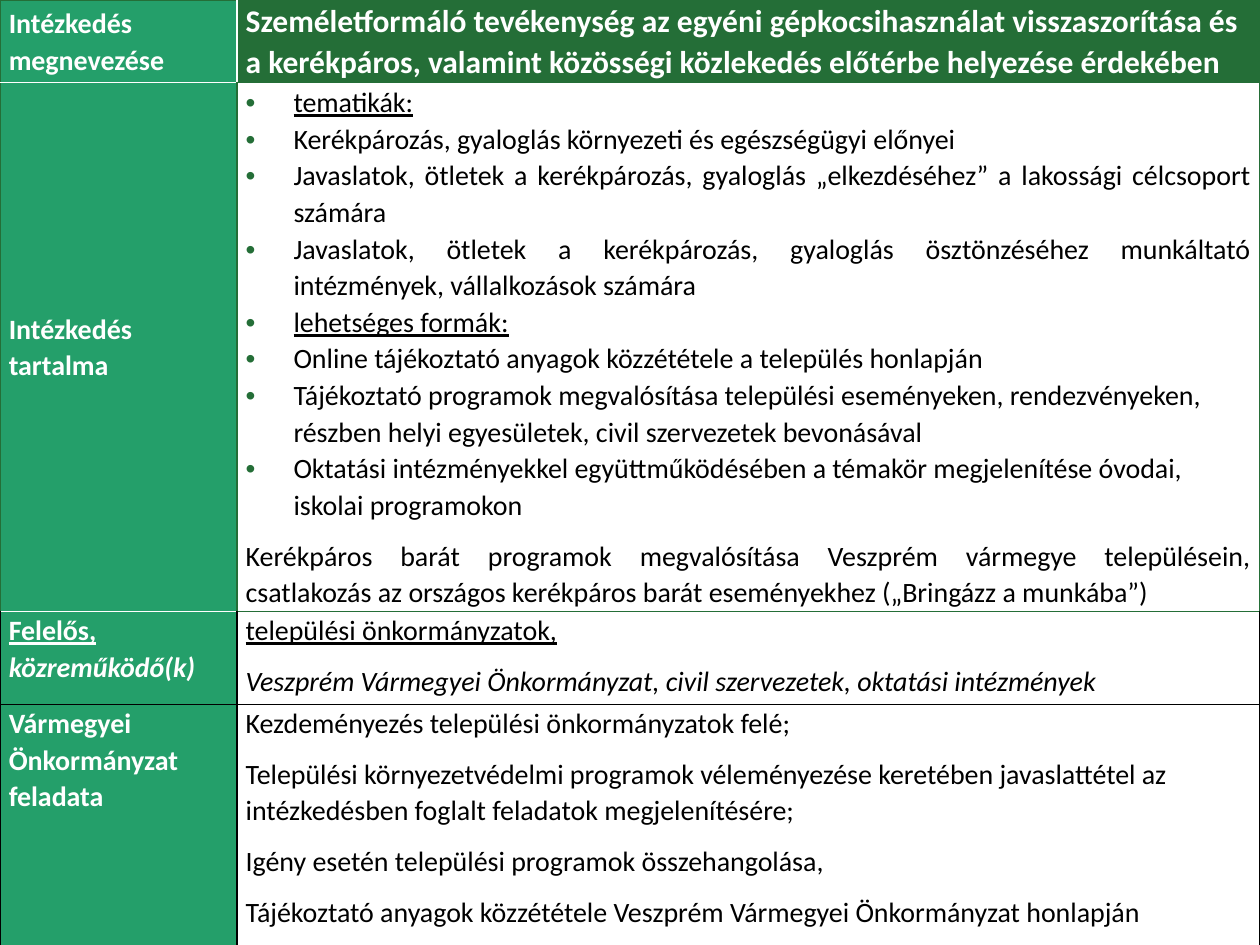
from dataclasses import dataclass

from lxml.etree import SubElement
from pptx import Presentation
from pptx.dml.color import RGBColor
from pptx.enum.text import MSO_ANCHOR, PP_ALIGN
from pptx.oxml.ns import qn
from pptx.util import Inches, Pt


@dataclass(frozen=True)
class Theme:
    font: str = "Calibri"
    body_size: int = 16
    title_size: int = 18
    white: str = "FFFFFF"
    black: str = "000000"
    label_green: str = "249F6A"
    dark_green: str = "246E37"
    border_width: int = 1
    line_spacing: float = 1.07
    space_after: int = 8


THEME = Theme()
LABEL = {"bold": True, "color": THEME.white}
TITLE = LABEL | {"size": Pt(THEME.title_size)}
BODY = {"bold": False, "color": THEME.black}
UNDERLINED = {"underline": True}
ITALIC = {"italic": True}

COLUMN_WIDTHS = (1.88, 8.12)
ROW_HEIGHTS = (0.59, 4.2, 0.74, 1.97)


def paragraph(*spans, **layout):
    return {"spans": spans, "layout": layout}


def bullet(text, align=PP_ALIGN.JUSTIFY, space_after=0, **formats):
    return paragraph((text, BODY | formats), bullet=True, alignment=align,
                     space_after=Pt(space_after))


def body(text, **formats):
    return paragraph((text, BODY | formats))


MEASURE_NAME = [paragraph(("Intézkedés megnevezése", LABEL))]
MEASURE_TITLE = [paragraph((
    "Személetformáló tevékenység az egyéni gépkocsihasználat visszaszorítása és "
    "a kerékpáros, valamint közösségi közlekedés előtérbe helyezése érdekében", TITLE))]
CONTENT_LABEL = [paragraph(("Intézkedés tartalma", LABEL))]
CONTENT = [
    bullet("tematikák:", **UNDERLINED),
    bullet("Kerékpározás, gyaloglás környezeti és egészségügyi előnyei"),
    bullet("Javaslatok, ötletek a kerékpározás, gyaloglás „elkezdéséhez” "
           "a lakossági célcsoport számára"),
    bullet("Javaslatok, ötletek a kerékpározás, gyaloglás ösztönzéséhez "
           "munkáltató intézmények, vállalkozások számára"),
    bullet("lehetséges formák:", **UNDERLINED),
    bullet("Online tájékoztató anyagok közzététele a település honlapján"),
    bullet("Tájékoztató programok megvalósítása települési eseményeken, rendezvényeken, "
           "részben helyi egyesületek, civil szervezetek bevonásával", PP_ALIGN.LEFT),
    bullet("Oktatási intézményekkel együttműködésében a témakör megjelenítése óvodai, "
           "iskolai programokon", PP_ALIGN.LEFT, THEME.space_after),
    paragraph(("Kerékpáros barát programok megvalósítása Veszprém vármegye településein, "
               "csatlakozás az országos kerékpáros barát eseményekhez "
               "(„Bringázz a munkába”)", BODY), alignment=PP_ALIGN.JUSTIFY),
]
RESPONSIBLE_LABEL = [paragraph(("Felelős, ", LABEL | UNDERLINED),
                               ("közreműködő(k)", LABEL | ITALIC))]
RESPONSIBLE = [
    body("települési önkormányzatok,", **UNDERLINED),
    body("Veszprém Vármegyei Önkormányzat, civil szervezetek, oktatási intézmények", **ITALIC),
]
TASK_LABEL = [paragraph(("Vármegyei Önkormányzat feladata", LABEL))]
TASKS = [
    body("Kezdeményezés települési önkormányzatok felé;"),
    body("Települési környezetvédelmi programok véleményezése keretében javaslattétel az "
         "intézkedésben foglalt feladatok megjelenítésére;"),
    body("Igény esetén települési programok összehangolása,"),
    body("Tájékoztató anyagok közzététele Veszprém Vármegyei Önkormányzat honlapján"),
]

GREEN, WHITE, BLACK = THEME.dark_green, THEME.white, THEME.black
MIDDLE, TOP = MSO_ANCHOR.MIDDLE, MSO_ANCHOR.TOP
ROWS = [
    [(MEASURE_NAME, THEME.label_green, MIDDLE, (GREEN, WHITE, GREEN, WHITE)),
     (MEASURE_TITLE, GREEN, MIDDLE, (WHITE, GREEN, GREEN, GREEN))],
    [(CONTENT_LABEL, THEME.label_green, MIDDLE, (GREEN, GREEN, WHITE, WHITE)),
     (CONTENT, None, MIDDLE, (GREEN,) * 4)],
    [(RESPONSIBLE_LABEL, THEME.label_green, TOP, (BLACK, BLACK, WHITE, BLACK)),
     (RESPONSIBLE, None, TOP, (BLACK, BLACK, GREEN, BLACK))],
    [(TASK_LABEL, THEME.label_green, TOP, (BLACK,) * 4),
     (TASKS, None, TOP, (BLACK,) * 4)],
]


def set_attributes(target, formats):
    for name, value in formats.items():
        setattr(target, name, value)


def set_borders(cell, colors):
    properties = cell._tc.get_or_add_tcPr()
    for side, color in zip(("lnL", "lnR", "lnT", "lnB"), colors):
        line = SubElement(properties, qn(f"a:{side}"), w=str(Pt(THEME.border_width)))
        fill = SubElement(line, qn("a:solidFill"))
        SubElement(fill, qn("a:srgbClr"), val=color)


def add_bullet(para):
    properties = para._p.get_or_add_pPr()
    properties.set("marL", str(Inches(0.38)))
    properties.set("indent", str(Inches(-0.38)))
    color = SubElement(properties, qn("a:buClr"))
    SubElement(color, qn("a:srgbClr"), val=THEME.dark_green)
    SubElement(properties, qn("a:buFont"), typeface="Arial")
    SubElement(properties, qn("a:buChar"), char="•")


def add_span(para, text, formats):
    span = para.add_run()
    span.text = text
    values = {"name": THEME.font, "size": Pt(THEME.body_size)} | formats
    color = values.pop("color")
    set_attributes(span.font, values)
    span.font.color.rgb = RGBColor.from_string(color)


def write_paragraph(para, content):
    layout = {"line_spacing": THEME.line_spacing, "space_before": Pt(0),
              "space_after": Pt(THEME.space_after),
              "alignment": PP_ALIGN.LEFT} | content["layout"]
    if layout.pop("bullet", False):
        add_bullet(para)
    set_attributes(para, layout)
    for text, formats in content["spans"]:
        add_span(para, text, formats)


def fill_cell(cell, paragraphs, fill, anchor, borders):
    set_attributes(cell, {
        "margin_left": Inches(0.07), "margin_right": Inches(0.07),
        "margin_top": 0, "margin_bottom": 0, "vertical_anchor": anchor,
    })
    set_borders(cell, borders)
    if fill:
        cell.fill.solid()
        cell.fill.fore_color.rgb = RGBColor.from_string(fill)
    else:
        cell.fill.background()
    frame = cell.text_frame
    for index, content in enumerate(paragraphs):
        para = frame.add_paragraph() if index else frame.paragraphs[0]
        write_paragraph(para, content)


def add_measure_table(slide):
    table = slide.shapes.add_table(
        len(ROW_HEIGHTS), len(COLUMN_WIDTHS), 0, 0,
        Inches(sum(COLUMN_WIDTHS)), Inches(sum(ROW_HEIGHTS))).table
    set_attributes(table, {"first_row": False, "horz_banding": False})
    for column, width in zip(table.columns, COLUMN_WIDTHS):
        column.width = Inches(width)
    for row, height, contents in zip(table.rows, ROW_HEIGHTS, ROWS):
        row.height = Inches(height)
        for cell, content in zip(row.cells, contents):
            fill_cell(cell, *content)


def main():
    deck = Presentation()
    set_attributes(deck, {"slide_width": Inches(10), "slide_height": Inches(7.5)})
    page = deck.slides.add_slide(deck.slide_layouts[6])
    add_measure_table(page)
    deck.save("out.pptx")


if __name__ == "__main__":
    main()
